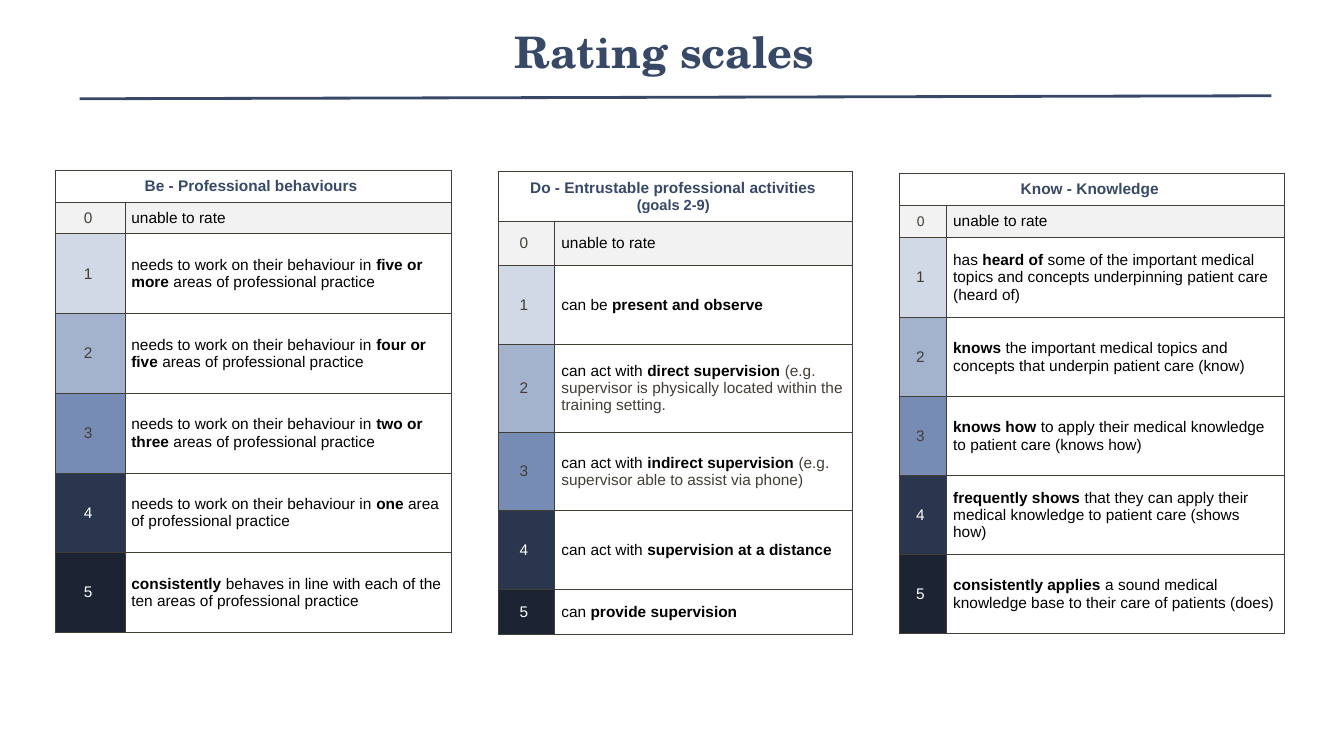
import pptx
import pptx.dml.color
import pptx.enum.shapes
import pptx.enum.text
import pptx.oxml
import pptx.oxml.ns
import pptx.util

NAVY, GREY, BLACK, WHITE, PALE = "384967", "433E35", "000000", "FFFFFF", "F2F2F2"
LEVEL_FILLS = [PALE, "D1D8E6", "A3B2CD", "768CB4", "2A364D", "1C2433"]
LEVEL_COLOURS = [GREY] * 4 + [WHITE] * 2
HARD_SPACE = chr(160)

BEHAVIOUR = "needs to work on their behaviour in "
SCALES = [
    dict(
        left=4.13, top=22.53, columns=[5.2, 24.25],
        rows=[4.2, 4.2] + [10.55] * 5, margins=(4.3, 2.2), zero_size=11,
        heading=[("Be - Professional behaviours", 11)],
        levels=[
            "unable to rate",
            BEHAVIOUR + "*five or more *areas of professional practice",
            BEHAVIOUR + "*four or five *areas of professional practice",
            BEHAVIOUR + "*two or three *areas of professional practice",
            BEHAVIOUR + "*one *area of professional practice",
            "*consistently *behaves in line with each of the ten areas of professional practice",
        ],
    ),
    dict(
        left=37.05, top=22.67, columns=[4.2, 22.2],
        rows=[6.6, 5.9, 10.4, 11.6, 10.4, 10.4, 5.9], margins=(5, 2.9), zero_size=11,
        heading=[("Do - Entrustable professional activities", 11), ("(goals 2-9)", 10.5)],
        levels=[
            "unable to rate",
            "can be *present and observe",
            "can act with *direct supervision *"
            "|(e.g. supervisor is physically located within the training setting.",
            "can act with *indirect supervision *|(e.g. supervisor able to assist via phone)",
            "can act with *supervision at a distance",
            "can *provide supervision",
        ],
    ),
    dict(
        left=66.9, top=22.93, columns=[3.5, 25.2],
        rows=[4.25, 4.25, 10.6] + [10.45] * 4, margins=(5, 2.2), zero_size=10,
        heading=[("Know - Knowledge", 11)],
        levels=[
            "unable to rate",
            "has *heard of *some of the important medical topics and concepts "
            "underpinning patient care (heard of)",
            "*knows *the important medical topics and concepts that underpin patient care (know)",
            f"*knows how *to apply their medical knowledge to{HARD_SPACE}patient care (knows how)",
            "*frequently shows* that they can apply their medical knowledge "
            "to patient care (shows how)",
            "*consistently applies* a sound medical knowledge base "
            "to their care of patients (does)",
        ],
    ),
]


def colour(hex_string):
    """Turn a hex string into a colour."""
    return pptx.dml.color.RGBColor.from_string(hex_string)


class RatingSlide:
    """Draws styled elements placed in percent of the slide's width and height."""

    def __init__(self, deck):
        """Add a blank slide to the deck."""
        self.width, self.height = deck.slide_width, deck.slide_height
        self.shapes = deck.slides.add_slide(deck.slide_layouts[6]).shapes
        self.middle = pptx.enum.text.MSO_ANCHOR.MIDDLE
        self.centre = pptx.enum.text.PP_ALIGN.CENTER

    def x(self, share):
        """Convert a percentage of the width to a length."""
        return int(self.width * share / 100)

    def y(self, share):
        """Convert a percentage of the height to a length."""
        return int(self.height * share / 100)

    def style(self, run, size, tint, bold=False, face="Arial"):
        """Format one run."""
        run.font.size, run.font.bold, run.font.name = pptx.util.Pt(size), bold, face
        run.font.color.rgb = colour(tint)

    def title(self, wording, left, top, width, height):
        """Add the centred slide title."""
        box = self.shapes.add_textbox(self.x(left), self.y(top), self.x(width), self.y(height))
        frame = box.text_frame
        frame.word_wrap, frame.vertical_anchor = True, self.middle
        frame.text = wording
        frame.paragraphs[0].alignment = self.centre
        self.style(frame.paragraphs[0].runs[0], 31, NAVY, True, "TeX Gyre Schola")

    def rule(self, start_x, start_y, end_x, end_y):
        """Add the line under the title."""
        line = self.shapes.add_connector(
            pptx.enum.shapes.MSO_CONNECTOR.STRAIGHT,
            self.x(start_x), self.y(start_y), self.x(end_x), self.y(end_y))
        line.line.color.rgb, line.line.width = colour(NAVY), pptx.util.Pt(2)
        properties = line._element.spPr
        properties.append(properties.makeelement(pptx.oxml.ns.qn("a:effectLst"), {}))

    def prepare(self, cell, margins):
        """Set the borders, margins and anchor of a cell."""
        for edge in ("lnL", "lnR", "lnT", "lnB"):
            cell._tc.get_or_add_tcPr().append(pptx.oxml.parse_xml(
                f'<a:{edge} {pptx.oxml.ns.nsdecls("a")} w="{int(pptx.util.Pt(0.61))}">'
                f'<a:solidFill><a:srgbClr val="{GREY}"/></a:solidFill></a:{edge}>'))
        cell.margin_left = cell.margin_right = pptx.util.Pt(margins[0])
        cell.margin_top = cell.margin_bottom = pptx.util.Pt(margins[1])
        cell.vertical_anchor = self.middle
        cell.fill.background()

    def shade(self, cell, fill):
        """Fill a cell with one colour."""
        cell.fill.solid()
        cell.fill.fore_color.rgb = colour(fill)

    def label(self, cell, lines, tint, bold=False):
        """Write centred lines, each given with its size."""
        cell.text_frame.text = "\n".join(words + HARD_SPACE for words, size in lines)
        for paragraph, (words, size) in zip(cell.text_frame.paragraphs, lines):
            paragraph.alignment = self.centre
            self.style(paragraph.runs[0], size, tint, bold)

    def description(self, cell, markup):
        """Write a level: stars enclose bold words, a bar starts a grey remark."""
        statement, bar, remark = markup.partition("|")
        pieces = [(words, BLACK, index % 2 == 1)
                  for index, words in enumerate(statement.split("*"))]
        pieces.append((remark, GREY, False))
        paragraph = cell.text_frame.paragraphs[0]
        for words, tint, bold in pieces:
            if words:
                run = paragraph.add_run()
                run.text = words
                self.style(run, 11, tint, bold)

    def scale(self, left, top, columns, rows, margins, zero_size, heading, levels):
        """Add one rating scale as a table."""
        table = self.shapes.add_table(
            len(rows), len(columns), self.x(left), self.y(top),
            self.x(sum(columns)), self.y(sum(rows))).table
        table.first_row = table.horz_banding = False
        for column, share in zip(table.columns, columns):
            column.width = self.x(share)
        for row, share in zip(table.rows, rows):
            row.height = self.y(share)
        for cell in table.iter_cells():
            self.prepare(cell, margins)
        header = table.cell(0, 0)
        header.merge(table.cell(0, 1))
        self.shade(header, WHITE)
        self.label(header, heading, NAVY, True)
        for level, markup in enumerate(levels):
            number, meaning = table.cell(level + 1, 0), table.cell(level + 1, 1)
            self.shade(number, LEVEL_FILLS[level])
            self.label(number, [(str(level), 11 if level else zero_size)], LEVEL_COLOURS[level])
            self.description(meaning, markup)
        self.shade(table.cell(1, 1), PALE)


def main():
    """Build and save the slide."""
    deck = pptx.Presentation()
    deck.slide_width, deck.slide_height = pptx.util.Inches(13.33), pptx.util.Inches(7.5)
    slide = RatingSlide(deck)
    slide.title("Rating scales", 15.68, 0.53, 67.5, 12.53)
    for scale in SCALES:
        slide.scale(**scale)
    slide.rule(5.93, 13.07, 94.6, 12.67)
    deck.save("out.pptx")


if __name__ == "__main__":
    main()
